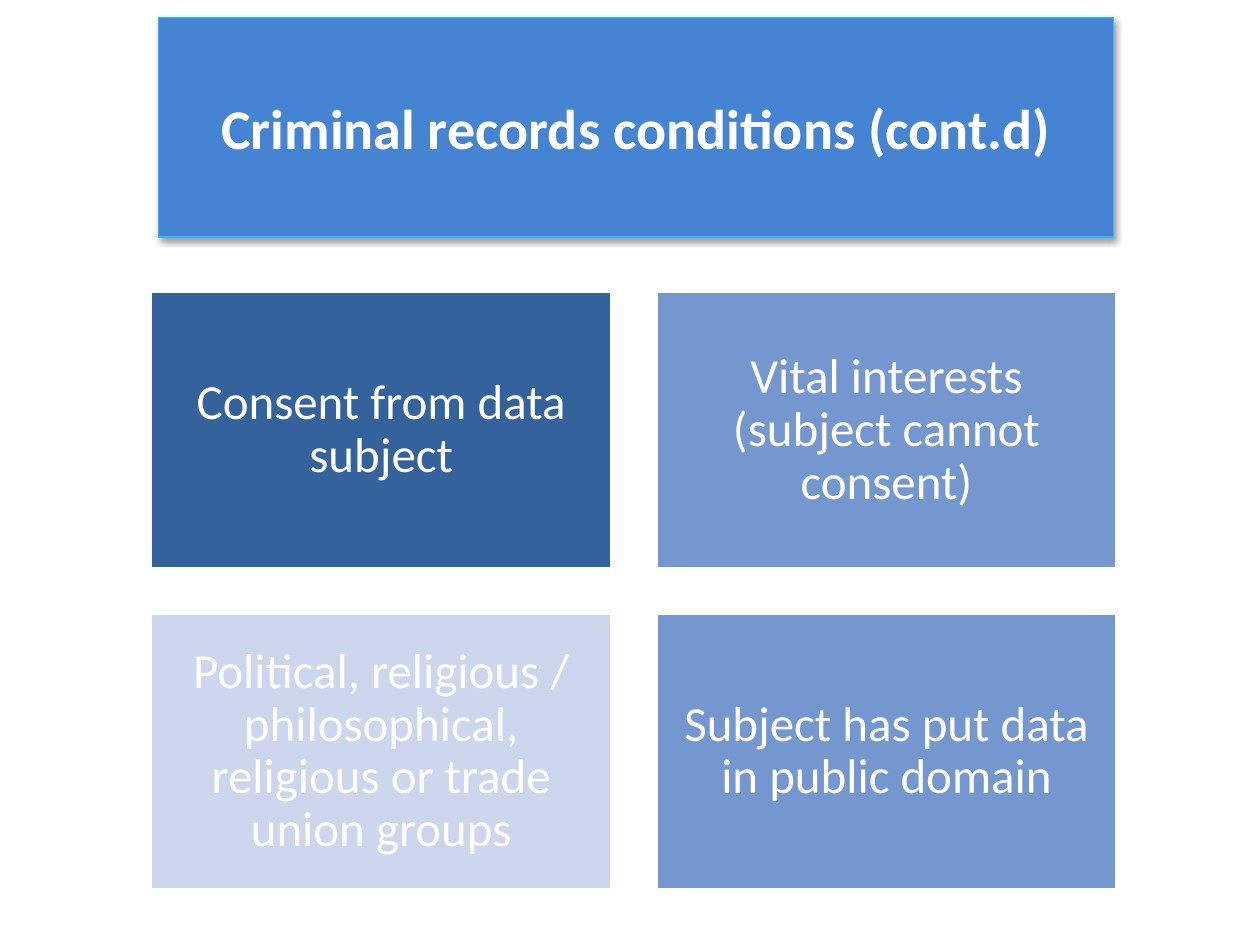
from lxml import etree
from pptx import Presentation
from pptx.dml.color import RGBColor
from pptx.enum.shapes import MSO_SHAPE
from pptx.enum.text import MSO_ANCHOR, MSO_AUTO_SIZE, PP_ALIGN
from pptx.oxml import parse_xml
from pptx.oxml.ns import nsdecls
from pptx.util import Inches, Pt

WHITE = RGBColor(0xFF, 0xFF, 0xFF)
TITLE_BLUE = RGBColor(0x45, 0x84, 0xD3)
TITLE_EDGE = RGBColor(0x31, 0xB6, 0xFD)
DARK_BLUE = RGBColor(0x33, 0x62, 0x9C)
MID_BLUE = RGBColor(0x74, 0x97, 0xD0)
PALE_BLUE = RGBColor(0xCC, 0xD6, 0xED)

LEFT, TOP = 1.2, 2.32
BOX_W, BOX_H = 3.65, 2.19
GAP = 0.36
CONDITIONS = [
    ("Consent from data subject", DARK_BLUE),
    ("Vital interests (subject cannot consent)", MID_BLUE),
    ("Political, religious / philosophical, religious or trade union groups", PALE_BLUE),
    ("Subject has put data in public domain", MID_BLUE),
]


def paint(s, fill, line, width):
    s.fill.solid()
    s.fill.fore_color.rgb = fill
    s.line.color.rgb = line
    s.line.width = Pt(width)


def write(s, text, size, bold=False):
    """Put one centred white run in the shape and return its paragraph."""
    tf = s.text_frame
    tf.word_wrap = True
    tf.auto_size = MSO_AUTO_SIZE.NONE
    tf.vertical_anchor = MSO_ANCHOR.MIDDLE
    p = tf.paragraphs[0]
    p.alignment = PP_ALIGN.CENTER
    r = p.add_run()
    r.text = text
    r.font.name = "Calibri"
    r.font.size = Pt(size)
    r.font.bold = bold
    r.font.color.rgb = WHITE
    return p


prs = Presentation()
prs.slide_width, prs.slide_height = Inches(10), Inches(7.5)
slide = prs.slides.add_slide(prs.slide_layouts[5])

# Title: the placeholder as a rounded bar with a soft shadow below
title = slide.shapes.title
title.left, title.top = Inches(1.26), Inches(0.14)
title.width, title.height = Inches(7.58), Inches(1.74)
sp_pr = title.element.spPr
sp_pr.append(parse_xml(f'<a:prstGeom {nsdecls("a")} prst="roundRect"><a:avLst/></a:prstGeom>'))
paint(title, TITLE_BLUE, TITLE_EDGE, 0.75)
sp_pr.append(parse_xml(
    f'<a:effectLst {nsdecls("a")}>'
    f'<a:outerShdw blurRad="{Pt(4)}" dist="{Pt(2)}" dir="5400000" rotWithShape="0">'
    '<a:srgbClr val="000000"><a:alpha val="38000"/></a:srgbClr>'
    '</a:outerShdw></a:effectLst>'))
write(title, "Criminal records conditions (cont.d)", 32, bold=True)

# Conditions: two by two grid
for i, (text, color) in enumerate(CONDITIONS):
    row, col = divmod(i, 2)
    s = slide.shapes.add_shape(
        MSO_SHAPE.RECTANGLE,
        Inches(LEFT + col * (BOX_W + GAP)), Inches(TOP + row * (BOX_H + GAP)),
        Inches(BOX_W), Inches(BOX_H))
    s.shadow.inherit = False
    paint(s, color, WHITE, 1.25)
    tf = s.text_frame
    tf.margin_left = tf.margin_right = tf.margin_top = tf.margin_bottom = Inches(0.12)
    p = write(s, text, 28)
    p.line_spacing = 0.9

prs.save("out.pptx")
